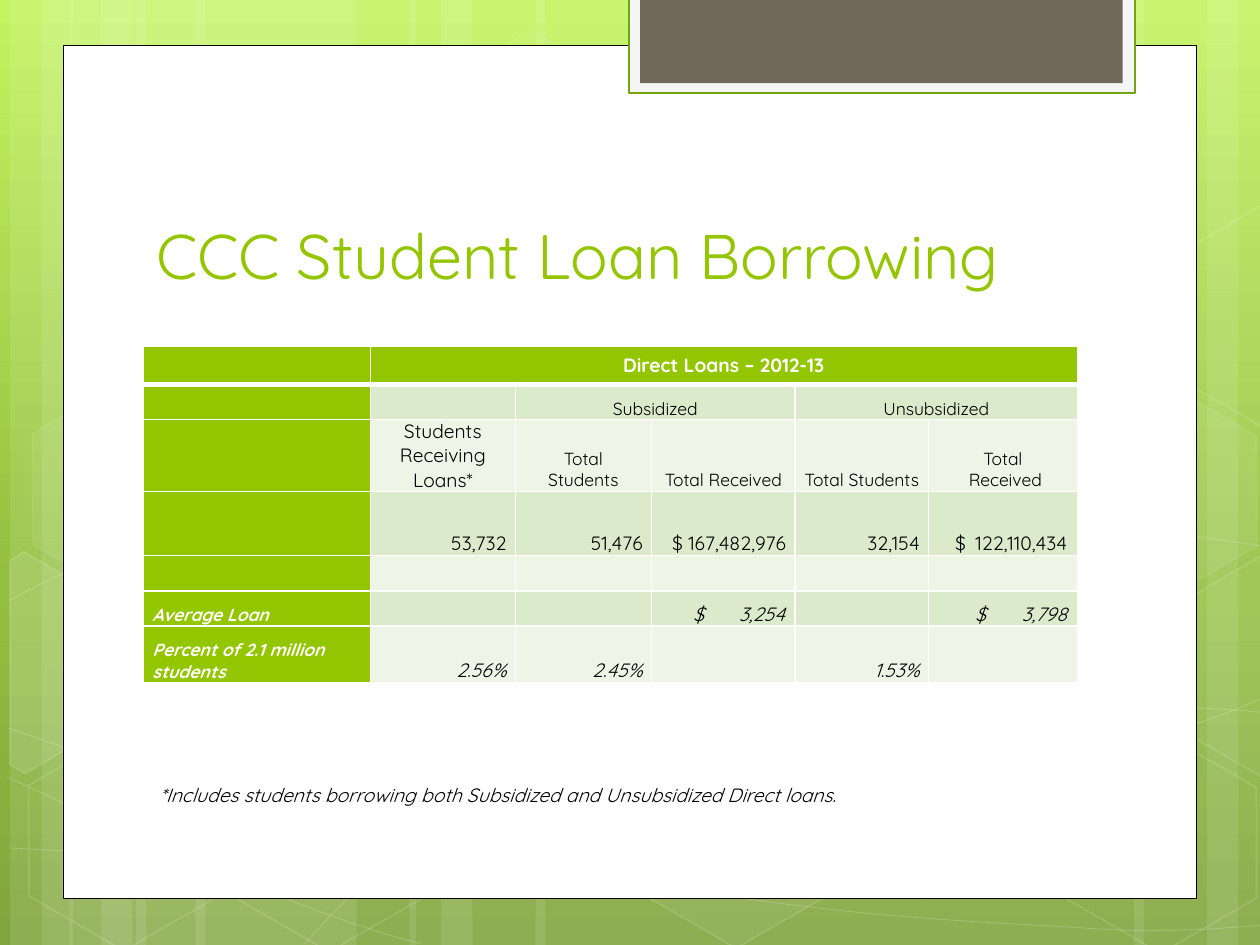
from copy import deepcopy
from dataclasses import dataclass

from lxml import etree
from pptx import Presentation
from pptx.dml.color import RGBColor
from pptx.enum.shapes import MSO_SHAPE
from pptx.enum.text import MSO_ANCHOR, PP_ALIGN
from pptx.oxml.ns import qn
from pptx.util import Pt

PX = 9144
FONT = "Quicksand"
WHITE, BLACK, GREEN = "FFFFFF", "000000", "94C600"
BANDS = ("EEF5E7", "DCEACC")
RECT, HEXAGON = MSO_SHAPE.RECTANGLE, MSO_SHAPE.HEXAGON
LEFT, CENTER, RIGHT = PP_ALIGN.LEFT, PP_ALIGN.CENTER, PP_ALIGN.RIGHT
TOP, MIDDLE, BOTTOM = MSO_ANCHOR.TOP, MSO_ANCHOR.MIDDLE, MSO_ANCHOR.BOTTOM
CELL_INSET = 7


@dataclass
class Hexagon:
    x: int
    y: int
    fill_alpha: int
    line_alpha: int


@dataclass
class Entry:
    row: int
    col: int
    text: str
    size: int = 10
    align: PP_ALIGN = CENTER
    color: str = BLACK
    bold: bool = False
    italic: bool = False
    span: int = 1
    anchor: MSO_ANCHOR = BOTTOM
    tab: int = 0


BACKGROUND = [(0, "C3F35F"), (0.62, "93BF3F"), (1, "81A53E")]
BARS = [(108, 175), (8, 50), (33, 83), (155, 175), (55, 50), (80, 83),
        (733, 175), (958, 50), (900, 83), (425, 308), (325, 50), (350, 83)]
CURVES = [
    [(7, 673), (61, 676), (115, 679), (190, 678), (265, 677), (358, 675), (458, 665),
     (558, 655), (700, 636), (792, 617), (883, 598), (977, 568), (1007, 551)],
    [(7, 477), (36, 461), (65, 446), (121, 431), (178, 416), (259, 394), (347, 387),
     (436, 380), (544, 379), (654, 387), (764, 395), (947, 426), (1007, 434)],
    [(6, 617), (127, 672), (247, 727), (334, 749)],
    [(7, 578), (38, 589), (70, 600), (128, 616), (186, 631), (273, 656), (357, 673),
     (440, 690), (545, 708), (628, 718), (711, 729), (800, 733), (853, 736),
     (905, 740), (919, 738), (945, 738), (971, 737), (989, 735), (1007, 734)],
    [(242, 749), (260, 729), (278, 709), (302, 691), (326, 673), (360, 653), (388, 639),
     (416, 625), (433, 619), (470, 609), (506, 599), (573, 585), (608, 578),
     (644, 571), (649, 571), (680, 569), (711, 566), (760, 563), (794, 562),
     (829, 561), (886, 562), (886, 562), (908, 562), (931, 562), (953, 562),
     (971, 563), (988, 564), (997, 565), (1006, 566), (1003, 565), (1006, 566)],
]
HEXAGONS = [
    Hexagon(334, 36, 4, 8), Hexagon(497, 589, 6, 12), Hexagon(11, 591, 0, 12),
    Hexagon(14, 312, 7, 8), Hexagon(174, 592, 0, 12), Hexagon(753, 453, 10, 12),
    Hexagon(834, 593, 0, 12), Hexagon(834, 314, 7, 8),
]
CUT_HEXAGONS = [
    ([(8, 445), (19, 438), (96, 482), (95, 570), (20, 614), (8, 607)], 10),
    ([(926, 485), (1001, 441), (1009, 446), (1009, 613), (1002, 617), (926, 573)], 4),
    ([(926, 207), (1001, 163), (1010, 168), (1009, 335), (1002, 339), (926, 295)], 0),
]
COLUMNS = [180, 115, 108, 114, 106, 118]
ROWS = [30, 28, 57, 51, 28, 28, 45]
LABEL = dict(align=LEFT, color=WHITE, bold=True, italic=True)
NUMBER = dict(size=11, align=RIGHT)
ENTRIES = [
    Entry(0, 1, "Direct Loans – 2012-13", 11, color=WHITE, bold=True, span=5, anchor=MIDDLE),
    Entry(1, 2, "Subsidized", span=2),
    Entry(1, 4, "Unsubsidized", span=2),
    Entry(2, 1, "Students Receiving Loans*", 11),
    Entry(2, 2, "Total\nStudents"),
    Entry(2, 3, "Total Received"),
    Entry(2, 4, "Total Students"),
    Entry(2, 5, "Total\n Received"),
    Entry(3, 1, "53,732", **NUMBER),
    Entry(3, 2, "51,476", **NUMBER),
    Entry(3, 3, "$ 167,482,976", **NUMBER),
    Entry(3, 4, "32,154", **NUMBER),
    Entry(3, 5, "$\t122,110,434", 11, tab=90),
    Entry(5, 0, "Average Loan", **LABEL),
    Entry(5, 3, "$\t3,254", 11, italic=True, tab=74),
    Entry(5, 5, "$\t3,798", 11, italic=True, tab=74),
    Entry(6, 0, "Percent of 2.1 million students", **LABEL),
    Entry(6, 1, "2.56%", italic=True, **NUMBER),
    Entry(6, 2, "2.45%", italic=True, **NUMBER),
    Entry(6, 4, "1.53%", italic=True, **NUMBER),
]


def rgb(color: str) -> RGBColor:
    return RGBColor.from_string(color)


def set_alpha(sp, where: str, alpha: int) -> None:
    if alpha < 100:
        clr = sp._element.spPr.find(where + qn("a:solidFill") + "/" + qn("a:srgbClr"))
        etree.SubElement(clr, qn("a:alpha")).set("val", str(alpha * 1000))


def style(sp, fill="", line="", width=1.0, fill_alpha=100, line_alpha=100) -> None:
    sp.shadow.inherit = False
    if fill and fill_alpha:
        sp.fill.solid()
        sp.fill.fore_color.rgb = rgb(fill)
        set_alpha(sp, "", fill_alpha)
    else:
        sp.fill.background()
    if line:
        sp.line.color.rgb = rgb(line)
        sp.line.width = Pt(width)
        set_alpha(sp, qn("a:ln") + "/", line_alpha)
    else:
        sp.line.fill.background()


def add_box(s, x: int, y: int, w: int, h: int, kind=RECT, **look):
    sp = s.shapes.add_shape(kind, x * PX, y * PX, w * PX, h * PX)
    style(sp, **look)
    return sp


def add_outline(s, points: list, closed: bool, **look):
    builder = s.shapes.build_freeform(*points[0], scale=PX)
    builder.add_line_segments(points[1:], close=closed)
    sp = builder.convert_to_shape()
    style(sp, **look)
    return sp


def add_curve(s, points: list, **look) -> None:
    sp = add_outline(s, points, False, **look)
    segments = list(sp._element.iter(qn("a:lnTo")))
    for i in range(0, len(segments), 3):
        curve = etree.Element(qn("a:cubicBezTo"))
        segments[i].addprevious(curve)
        for segment in segments[i:i + 3]:
            curve.append(segment[0])
            segment.getparent().remove(segment)


def write(tf, text: str, size=10, color=BLACK, bold=False, italic=False, align=LEFT, tab=0) -> None:
    tf.word_wrap = True
    for i, words in enumerate(text.split("\n")):
        p = tf.add_paragraph() if i else tf.paragraphs[0]
        p.alignment = align
        if tab:
            tabs = etree.SubElement(p._p.get_or_add_pPr(), qn("a:tabLst"))
            etree.SubElement(tabs, qn("a:tab"), pos=str(tab * PX), algn="r")
        r = p.add_run()
        r.text = words
        r.font.name, r.font.size = FONT, Pt(size)
        r.font.bold, r.font.italic = bold, italic
        r.font.color.rgb = rgb(color)


def add_text(s, x: int, y: int, w: int, h: int, text: str, anchor=TOP, **fmt) -> None:
    tf = s.shapes.add_textbox(x * PX, y * PX, w * PX, h * PX).text_frame
    tf.vertical_anchor = anchor
    write(tf, text, **fmt)


def set_borders(cell, top: int, bottom: int) -> None:
    tcPr = cell._tc.get_or_add_tcPr()
    for i, (side, width) in enumerate([("L", 1), ("R", 1), ("T", top), ("B", bottom)]):
        ln = etree.Element(qn("a:ln" + side), w=str(Pt(width)))
        fill = etree.SubElement(ln, qn("a:solidFill"))
        etree.SubElement(fill, qn("a:srgbClr"), val=WHITE)
        tcPr.insert(i, ln)


def add_loan_table(s, x: int, y: int) -> None:
    table = s.shapes.add_table(len(ROWS), len(COLUMNS), x * PX, y * PX,
                               sum(COLUMNS) * PX, sum(ROWS) * PX).table
    for column, width in zip(table.columns, COLUMNS):
        column.width = width * PX
    for i, (row, height) in enumerate(zip(table.rows, ROWS)):
        row.height = height * PX
        for j, cell in enumerate(row.cells):
            cell.fill.solid()
            cell.fill.fore_color.rgb = rgb(GREEN if i == 0 or j == 0 else BANDS[i % 2])
            cell.margin_left = cell.margin_right = CELL_INSET * PX
            cell.margin_top = cell.margin_bottom = 0
            set_borders(cell, 3 if i == 1 else 1, 3 if i == 0 else 1)
            cell.text_frame.paragraphs[0]._p.get_or_add_endParaRPr().set("sz", "1000")
    for e in ENTRIES:
        cell = table.cell(e.row, e.col)
        if e.span > 1:
            cell.merge(table.cell(e.row, e.col + e.span - 1))
        cell.vertical_anchor = e.anchor
        if e.tab:
            cell.margin_left = (COLUMNS[e.col] - CELL_INSET - e.tab) * PX
        write(cell.text_frame, e.text, e.size, e.color, e.bold, e.italic,
              LEFT if e.tab else e.align, max(e.tab - 1, 0))


def set_background(s) -> None:
    fill = s.background.fill
    fill.gradient()
    fill.gradient_angle = 270
    stops = next(s._element.iter(qn("a:gsLst")))
    stops.append(deepcopy(stops[0]))
    for stop, (position, color) in zip(fill.gradient_stops, BACKGROUND):
        stop.position = position
        stop.color.rgb = rgb(color)


def main() -> None:
    prs = Presentation()
    prs.slide_width, prs.slide_height = 1000 * PX, 750 * PX
    s = prs.slides.add_slide(prs.slide_layouts[6])
    set_background(s)
    for x, w in BARS:
        add_box(s, x, 0, w, 750, fill=WHITE, fill_alpha=10)
    for points in CURVES:
        add_curve(s, points, line=WHITE, width=0.5, line_alpha=20)
    for h in HEXAGONS:
        sp = add_box(s, h.x, h.y, 175, 152, HEXAGON, fill=WHITE, line=WHITE,
                     fill_alpha=h.fill_alpha, line_alpha=h.line_alpha)
        sp.adjustments[0] = 0.29
        sp.rotation = 30
    for points, alpha in CUT_HEXAGONS:
        add_outline(s, points, True, fill=WHITE, line=WHITE, fill_alpha=alpha, line_alpha=12)
    add_box(s, 50, 36, 900, 677, fill=WHITE, line=BLACK, width=0.5)
    add_box(s, 499, -2, 402, 76, fill="F5F5F5", line="74A510", width=1.25)
    add_box(s, 508, -2, 383, 68, fill="71685A")
    add_text(s, 114, 112, 768, 125, "CCC Student Loan Borrowing", BOTTOM, size=36, color=GREEN)
    add_loan_table(s, 114, 275)
    add_text(s, 117, 617, 692, 29, "*Includes students borrowing both Subsidized and "
             "Unsubsidized Direct loans.", size=11, italic=True)
    prs.save("out.pptx")


if __name__ == "__main__":
    main()
